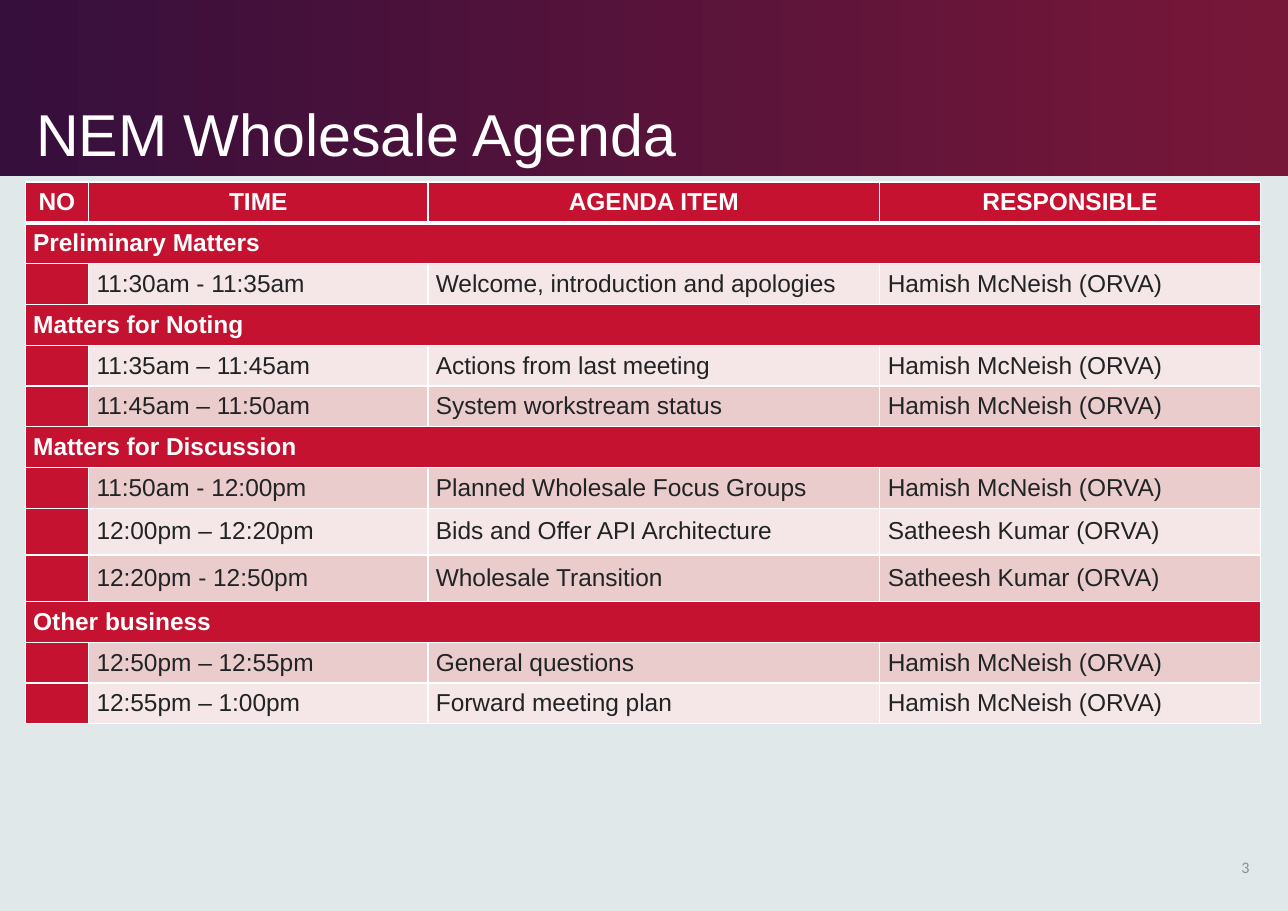
from pptx import Presentation
from pptx.dml.color import RGBColor
from pptx.enum.shapes import MSO_SHAPE
from pptx.enum.text import MSO_ANCHOR, PP_ALIGN
from pptx.oxml.ns import qn
from pptx.util import Pt
from lxml import etree

RECTANGLE = MSO_SHAPE.RECTANGLE
MIDDLE, BOTTOM = MSO_ANCHOR.MIDDLE, MSO_ANCHOR.BOTTOM
LEFT, CENTER, RIGHT = PP_ALIGN.LEFT, PP_ALIGN.CENTER, PP_ALIGN.RIGHT

WHITE = RGBColor(0xFF, 0xFF, 0xFF)
INK = RGBColor(0x22, 0x23, 0x24)
GREY = RGBColor(0x8D, 0x8D, 0x8E)
MIST = RGBColor(0xE0, 0xE8, 0xEA)
PLUM = RGBColor(0x36, 0x0F, 0x3C)
WINE = RGBColor(0x77, 0x17, 0x38)
RED = RGBColor(0xC4, 0x12, 0x30)
PALE_PINK = RGBColor(0xF5, 0xE7, 0xE8)
PINK = RGBColor(0xEA, 0xCC, 0xCD)

PAGE_WIDTH, PAGE_HEIGHT = 841.7, 595.4
COLUMN_WIDTHS = [41.4, 221.8, 295.3, 248.6]
ROW_HEIGHT, TALL_ROW_HEIGHT = 26.65, 30.5
TALL_ROWS = (8, 9)

HOST = "Hamish McNeish (ORVA)"
ARCHITECT = "Satheesh Kumar (ORVA)"
AGENDA = [
    ["NO", "TIME", "AGENDA ITEM", "RESPONSIBLE"],
    ["Preliminary Matters"],
    ["", "11:30am - 11:35am", "Welcome, introduction and apologies", HOST],
    ["Matters for Noting"],
    ["", "11:35am – 11:45am", "Actions from last meeting", HOST],
    ["", "11:45am – 11:50am", "System workstream status", HOST],
    ["Matters for Discussion"],
    ["", "11:50am - 12:00pm", "Planned Wholesale Focus Groups", HOST],
    ["", "12:00pm – 12:20pm", "Bids and Offer API Architecture", ARCHITECT],
    ["", "12:20pm - 12:50pm", "Wholesale Transition", ARCHITECT],
    ["Other business"],
    ["", "12:50pm – 12:55pm", "General questions", HOST],
    ["", "12:55pm – 1:00pm", "Forward meeting plan", HOST],
]


class AgendaPage:
    def __init__(self, deck):
        self.page = deck.slides.add_slide(deck.slide_layouts[6])
        background = self.page.background.fill
        background.solid()
        background.fore_color.rgb = MIST

    def banner(self, left, top, width, height):
        band = self.page.shapes.add_shape(
            RECTANGLE, Pt(left), Pt(top), Pt(width), Pt(height))
        band.shadow.inherit = False
        band.line.fill.background()
        band.fill.gradient()
        band.fill.gradient_angle = 0
        for stop, color in zip(band.fill.gradient_stops, (PLUM, WINE)):
            stop.color.rgb = color

    def add_span(self, para, words, size, color, align=LEFT, bold=False, font="Arial"):
        para.alignment = align
        span = para.add_run()
        span.text = words
        span.font.name = font
        span.font.size = Pt(size)
        span.font.bold = bold
        span.font.color.rgb = color

    def text(self, left, top, width, height, words, size, color, anchor, **style):
        box = self.page.shapes.add_textbox(Pt(left), Pt(top), Pt(width), Pt(height))
        frame = box.text_frame
        frame.word_wrap = True
        frame.vertical_anchor = anchor
        para = frame.paragraphs[0]
        para.line_spacing = 0.9
        self.add_span(para, words, size, color, **style)

    def borders(self, cell, top=1, bottom=1):
        properties = cell._tc.get_or_add_tcPr()
        for side, width in (("lnL", 1), ("lnR", 1), ("lnT", top), ("lnB", bottom)):
            line = etree.SubElement(properties, qn(f"a:{side}"), w=str(Pt(width)))
            paint = etree.SubElement(line, qn("a:solidFill"))
            etree.SubElement(paint, qn("a:srgbClr"), val=str(WHITE))

    def cell(self, cell, words, fill, color, align, bold):
        cell.margin_left = cell.margin_right = Pt(5.2)
        cell.margin_top = cell.margin_bottom = 0
        cell.vertical_anchor = MIDDLE
        cell.fill.solid()
        cell.fill.fore_color.rgb = fill
        if words:
            para = cell.text_frame.paragraphs[0]
            para.space_before = para.space_after = Pt(1)
            self.add_span(para, words, 16, color, align, bold)

    def table(self, left, top, rows):
        heights = [TALL_ROW_HEIGHT if index in TALL_ROWS else ROW_HEIGHT
                   for index in range(len(rows))]
        grid = self.page.shapes.add_table(
            len(rows), len(COLUMN_WIDTHS), Pt(left), Pt(top),
            Pt(sum(COLUMN_WIDTHS)), Pt(sum(heights))).table
        grid.first_row = grid.horz_banding = False
        for column, width in zip(grid.columns, COLUMN_WIDTHS):
            column.width = Pt(width)
        for index, entries in enumerate(rows):
            grid.rows[index].height = Pt(heights[index])
            header, section = index == 0, len(entries) == 1
            stripe = PINK if index % 2 else PALE_PINK
            if section:
                grid.cell(index, 0).merge(grid.cell(index, len(COLUMN_WIDTHS) - 1))
            for position in range(len(COLUMN_WIDTHS)):
                cell = grid.cell(index, position)
                self.borders(cell, 3 if index == 1 else 1, 3 if header else 1)
                strong = header or section or position == 0
                words = entries[position] if position < len(entries) else ""
                self.cell(cell, words, RED if strong else stripe,
                          WHITE if strong else INK,
                          CENTER if header else LEFT, strong)


def main():
    deck = Presentation()
    deck.slide_width, deck.slide_height = Pt(PAGE_WIDTH), Pt(PAGE_HEIGHT)
    agenda = AgendaPage(deck)
    agenda.banner(0, 0, PAGE_WIDTH, 115.2)
    agenda.text(16.5, 11.5, 621.4, 103, "NEM Wholesale Agenda", 38.6, WHITE, BOTTOM)
    agenda.text(784, 551.5, 39.6, 31.7, "3", 10.5, GREY, MIDDLE,
                align=RIGHT, font="Calibri")
    agenda.table(16.5, 119, AGENDA)
    deck.save("out.pptx")


if __name__ == "__main__":
    main()
